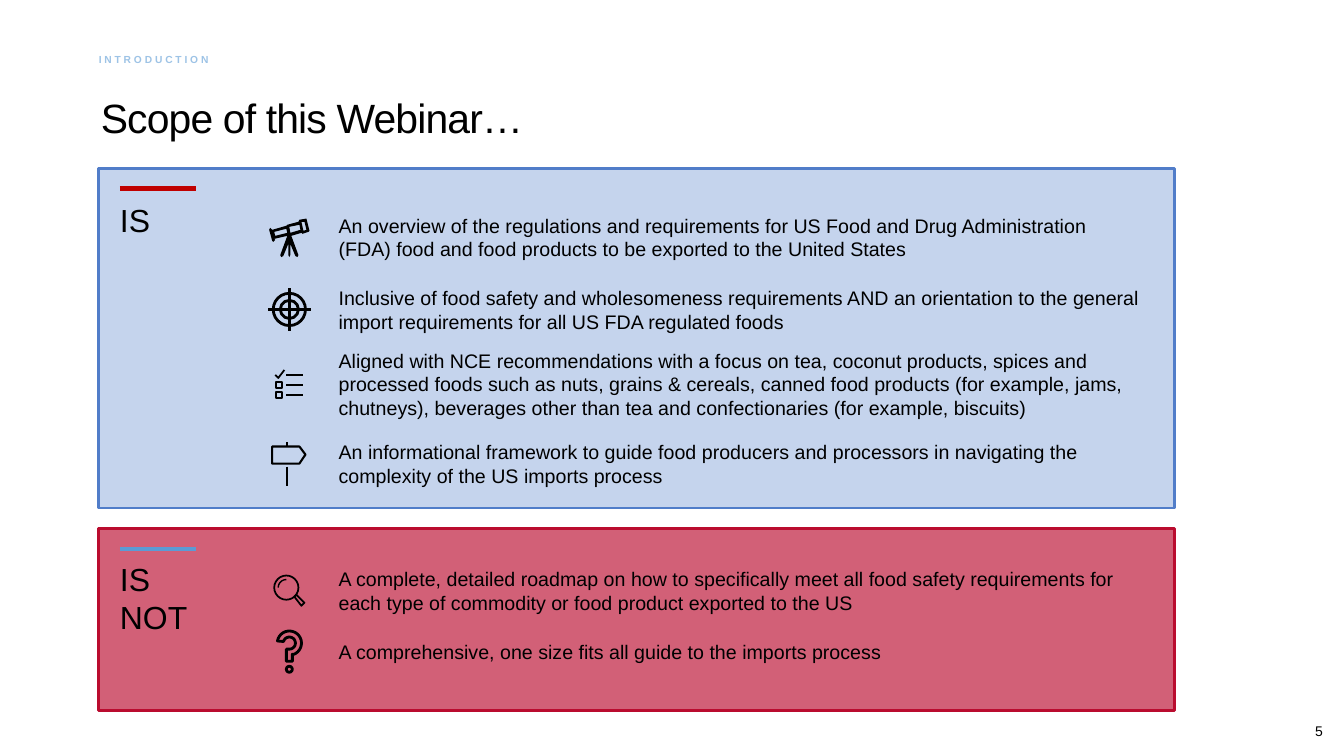
from math import cos, radians, sin

from lxml import etree
from pptx import Presentation
from pptx.dml.color import RGBColor
from pptx.enum.shapes import MSO_CONNECTOR, MSO_SHAPE
from pptx.enum.text import MSO_ANCHOR, MSO_AUTO_SIZE, PP_ALIGN
from pptx.oxml.ns import qn
from pptx.util import Inches, Pt

STRAIGHT = MSO_CONNECTOR.STRAIGHT
RECTANGLE, OVAL = MSO_SHAPE.RECTANGLE, MSO_SHAPE.OVAL
TOP, BOTTOM = MSO_ANCHOR.TOP, MSO_ANCHOR.BOTTOM
LEFT, RIGHT = PP_ALIGN.LEFT, PP_ALIGN.RIGHT
NO_AUTOFIT = MSO_AUTO_SIZE.NONE
FONT = "Arial"
BLACK = "000000"

STATEMENTS = [
    (2.07, 0.57, "An overview of the regulations and requirements for US Food and Drug Administration (FDA) "
                 "food and food products to be exported to the United States"),
    (2.79, 0.57, "Inclusive of food safety and wholesomeness requirements AND an orientation to the general "
                 "import requirements for all US FDA regulated foods"),
    (3.41, 0.81, "Aligned with NCE recommendations with a focus on tea, coconut products, spices and processed "
                 "foods such as nuts, grains & cereals, canned food products (for example, jams, chutneys), "
                 "beverages other than tea and confectionaries (for example, biscuits)"),
    (4.32, 0.57, "An informational framework to guide food producers and processors in navigating the "
                 "complexity of the US imports process"),
    (5.58, 0.57, "A complete, detailed roadmap on how to specifically meet all food safety requirements for "
                 "each type of commodity or food product exported to the US"),
    (6.3, 0.34, "A comprehensive, one size fits all guide to the imports process"),
]
TELESCOPE_EDGE = [
    (3.07, 2.29), (3.04, 2.17), (3.03, 2.17), (2.97, 2.18), (2.96, 2.2), (2.85, 2.23), (2.84, 2.24),
    (2.7, 2.28), (2.69, 2.27), (2.68, 2.26), (2.67, 2.28), (2.7, 2.39), (2.71, 2.4), (2.73, 2.38),
    (2.72, 2.37), (2.85, 2.34), (2.78, 2.53), (2.79, 2.55), (2.81, 2.54), (2.86, 2.42), (2.86, 2.53),
    (2.87, 2.55), (2.88, 2.53), (2.88, 2.42), (2.93, 2.54), (2.95, 2.55), (2.96, 2.53), (2.89, 2.34),
    (2.99, 2.31), (3, 2.32), (3.06, 2.3),
]
TELESCOPE_GAPS = [
    [(2.72, 2.3), (2.84, 2.27), (2.85, 2.31), (2.73, 2.34)],
    [(2.88, 2.31), (2.87, 2.25), (2.97, 2.23), (2.98, 2.28)],
    [(3.01, 2.29), (2.99, 2.2), (3.02, 2.2), (3.04, 2.28)],
]


def color(value):
    """Turn a hex string into a colour."""
    return RGBColor.from_string(value)


def format_text(holder, text, size, ink=BLACK, inset=(0, 0, 0, 0), anchor=TOP, align=LEFT):
    """Fill a text holder with one formatted paragraph and return the paragraph."""
    frame = holder.text_frame
    frame.text = text
    frame.word_wrap = True
    frame.auto_size = NO_AUTOFIT
    frame.vertical_anchor = anchor
    frame.margin_left, frame.margin_top, frame.margin_right, frame.margin_bottom = map(Inches, inset)
    paragraph = frame.paragraphs[0]
    paragraph.alignment = align
    paragraph.font.name = FONT
    paragraph.font.size = Pt(size)
    paragraph.font.color.rgb = color(ink)
    return paragraph


def add_text(slide, box, text, size, **options):
    """Add a text box."""
    return format_text(slide.shapes.add_textbox(*map(Inches, box)), text, size, **options)


def fill_placeholder(placeholder, box, text, size, spacing, **options):
    """Move a placeholder and set its single line of letter-spaced text."""
    placeholder.left, placeholder.top, placeholder.width, placeholder.height = map(Inches, box)
    paragraph = format_text(placeholder, text, size, **options)
    paragraph.line_spacing = 0.9
    paragraph.runs[0].font._element.set("spc", str(spacing))
    return paragraph


def add_panel(slide, top, height, fill, border, opacity=100):
    """Add a bordered panel across the content width."""
    panel = slide.shapes.add_shape(RECTANGLE, *map(Inches, (0.98, top, 10.67, height)))
    panel.shadow.inherit = False
    panel.fill.solid()
    panel.fill.fore_color.rgb = color(fill)
    panel.line.color.rgb = color(border)
    panel.line.width = Pt(2)
    if opacity < 100:
        hue = panel._element.spPr.find(qn("a:solidFill"))[0]
        etree.SubElement(hue, qn("a:alpha")).set("val", str(opacity * 1000))


def add_line(slide, start, end, weight, ink=BLACK):
    """Add a straight line."""
    line = slide.shapes.add_connector(STRAIGHT, *map(Inches, (*start, *end)))
    line.line.color.rgb = color(ink)
    line.line.width = Pt(weight)
    etree.SubElement(line._element.spPr, qn("a:effectLst"))


def outline(shape, weight):
    """Leave a shape unfilled with a black outline."""
    shape.shadow.inherit = False
    shape.fill.background()
    shape.line.color.rgb = color(BLACK)
    shape.line.width = Pt(weight)


def build_path(slide, contours, close=True):
    """Build one freeform from one or more contours."""
    scaled = [[(Inches(x), Inches(y)) for x, y in contour] for contour in contours]
    builder = slide.shapes.build_freeform(*scaled[0][0], scale=1.0)
    builder.add_line_segments(scaled[0][1:], close=close)
    for contour in scaled[1:]:
        builder.move_to(*contour[0])
        builder.add_line_segments(contour[1:], close=close)
    return builder.convert_to_shape()


def add_path(slide, points, weight, close=True):
    """Add an outlined path through points."""
    outline(build_path(slide, [points], close), weight)


def add_ring(slide, center, radius, weight):
    """Add an outlined circle."""
    x, y = center
    box = (x - radius, y - radius, 2 * radius, 2 * radius)
    outline(slide.shapes.add_shape(OVAL, *map(Inches, box)), weight)


def arc(center, radius, first, last, steps=20):
    """List points along an arc, with angles in degrees clockwise from the right."""
    angles = [radians(first + (last - first) * i / steps) for i in range(steps + 1)]
    return [(center[0] + radius * cos(a), center[1] + radius * sin(a)) for a in angles]


def draw_telescope(slide):
    """Draw the telescope on its tripod as one silhouette with gaps."""
    telescope = build_path(slide, [TELESCOPE_EDGE, *TELESCOPE_GAPS])
    telescope.shadow.inherit = False
    telescope.fill.solid()
    telescope.fill.fore_color.rgb = color(BLACK)
    telescope.line.fill.background()


def draw_target(slide):
    """Draw the target with cross hairs."""
    for radius in (0.16, 0.09):
        add_ring(slide, (2.87, 3.07), radius, 2)
    add_line(slide, (2.87, 2.86), (2.87, 3.28), 1.75)
    add_line(slide, (2.66, 3.07), (3.08, 3.07), 1.75)


def draw_checklist(slide):
    """Draw the checklist with one ticked item."""
    for y in (3.72, 3.82, 3.92):
        add_line(slide, (2.84, y), (3.01, y), 1.25)
    for top in (3.79, 3.89):
        add_path(slide, [(2.74, top), (2.8, top), (2.8, top + 0.06), (2.74, top + 0.06)], 1.25)
    add_path(slide, [(2.73, 3.72), (2.76, 3.75), (2.82, 3.67)], 1.25, close=False)


def draw_signpost(slide):
    """Draw the signpost."""
    add_path(slide, [(2.7, 4.43), (2.97, 4.43), (3.03, 4.51), (2.97, 4.6), (2.7, 4.6)], 1.5)
    add_line(slide, (2.85, 4.39), (2.85, 4.43), 1.5)
    add_line(slide, (2.85, 4.63), (2.85, 4.82), 1.5)


def draw_magnifier(slide):
    """Draw the magnifying glass."""
    lens = (2.84, 5.83)
    add_ring(slide, lens, 0.12, 1.25)
    add_path(slide, arc(lens, 0.08, 180, 270), 1, close=False)
    add_path(slide, [(2.92, 5.92), (2.94, 5.9), (3.02, 5.98), (2.99, 6.01)], 1.25)


def draw_question(slide):
    """Draw the outlined question mark."""
    center = (2.87, 6.38)
    hook = arc(center, 0.06, 90, -165) + arc(center, 0.12, -170, 70)
    add_path(slide, [(2.84, 6.56), (2.84, 6.44), *hook, (2.9, 6.49), (2.9, 6.56)], 2)
    add_ring(slide, (2.87, 6.64), 0.03, 2)


def main():
    """Build the scope slide."""
    deck = Presentation()
    deck.slide_width, deck.slide_height = Inches(13.33), Inches(7.5)
    slide = deck.slides.add_slide(deck.slide_layouts[1])
    title, section = slide.placeholders
    fill_placeholder(title, (1, 0.76, 11.33, 0.65), "Scope of this Webinar…", 29.2, -60,
                     inset=(0, 0.05, 0, 0), anchor=BOTTOM)
    label = fill_placeholder(section, (0.98, 0.54, 3.5, 0.22), "INTRODUCTION", 7.3, 200, ink="9DC3E6")
    label.font.bold = True
    label.space_before = Pt(10)
    properties = label._p.get_or_add_pPr()
    properties.set("marL", "0")
    properties.set("indent", "0")
    etree.SubElement(properties, qn("a:buNone"))
    properties.append(properties.find(qn("a:defRPr")))

    add_panel(slide, 1.67, 3.37, "C5D4ED", "517DC9")
    add_panel(slide, 5.24, 1.81, "BA0C2F", "BA0C2F", opacity=65)
    for heading, width, top, rule, accent in (("IS", 0.6, 1.99, 1.87, "C00000"),
                                              ("IS NOT", 1.04, 5.55, 5.45, "5B9BD5")):
        add_text(slide, (1.19, top, width, 0.38), heading, 22.8)
        add_line(slide, (1.19, rule), (1.94, rule), 3, accent)
    for top, height, statement in STATEMENTS:
        add_text(slide, (3.26, top, 8.18, height), statement, 14, inset=(0.1, 0.05, 0.1, 0.05))
    for draw_icon in (draw_telescope, draw_target, draw_checklist,
                      draw_signpost, draw_magnifier, draw_question):
        draw_icon(slide)
    add_text(slide, (10.69, 7.12, 2.53, 0.27), "5", 10, inset=(0.1, 0.05, 0.1, 0.05), align=RIGHT)
    deck.save("out.pptx")


if __name__ == "__main__":
    main()
